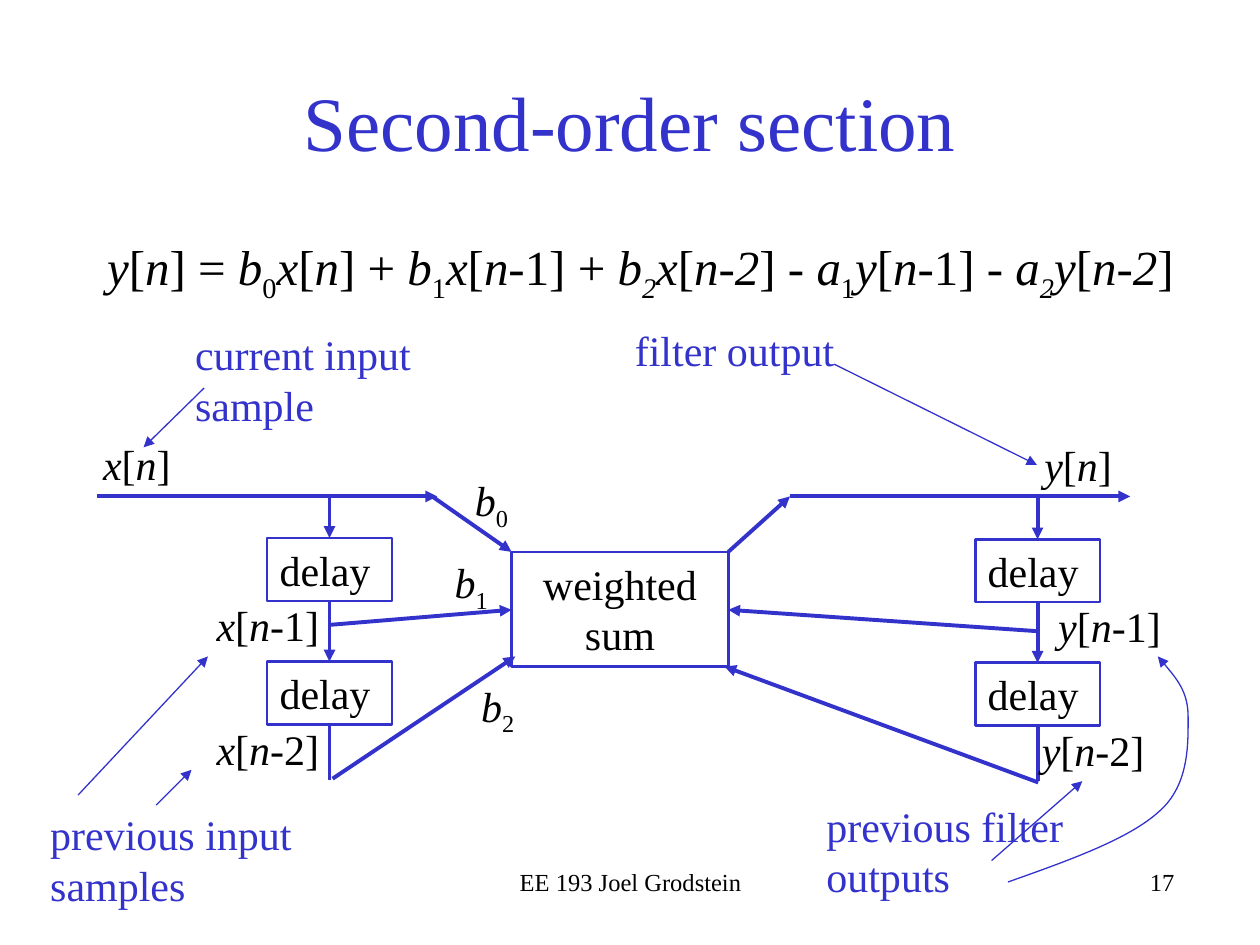
"""Builds the slide on the second-order filter section."""
from dataclasses import dataclass
from lxml.etree import SubElement
from pptx import Presentation
from pptx.dml.color import RGBColor
from pptx.enum.shapes import MSO_CONNECTOR, MSO_SHAPE
from pptx.enum.text import MSO_ANCHOR, MSO_AUTO_SIZE, PP_ALIGN as AL
from pptx.oxml.ns import qn
from pptx.util import Inches as In, Pt


@dataclass(frozen=True)
class Theme:
    font: str = "Times New Roman"
    blue: RGBColor = RGBColor(0x33, 0x33, 0xCC)
    black: RGBColor = RGBColor(0, 0, 0)
    title: int = 44
    equation: int = 28
    label: int = 24
    footer: int = 14
    flow: float = 2.25
    box: float = 1.5
    pointer: float = 0.75


T = Theme()
STYLES = {"/": (True, False), "_": (False, True), "~": (True, True)}

TITLE = "Second-order section"
EQUATION = ("/y|[|/n|] = |/b|_0|/x|[|/n|] + |/b|_1|/x|[|/n-|1] + |/b|~2|/x|[|/n-2|] - "
            "|/a|_1|/y|[|/n-|1] - |/a|~2|/y|[|/n-2|]")
FOOTERS = [("EE 193 Joel Grodstein", 3.42, AL.CENTER), ("17", 6.25, AL.RIGHT)]

SIGNALS = [
    ("/x|[|/n|]", 0.72, 3.43, 0.8), ("/y|[|/n|]", 8.19, 3.44, 0.8),
    ("/x|[|/n|-1]", 1.62, 4.71, 1.08), ("/y|[|/n|-1]", 8.3, 4.72, 1.08),
    ("/x|[|/n|-2]", 1.62, 5.69, 1.08), ("/y|[|/n|-2]", 8.17, 5.7, 1.08),
    ("/b|_0", 3.67, 3.72, 0.61), ("/b|_1", 3.51, 4.37, 0.61), ("/b|_2", 3.72, 5.35, 0.61),
]
NOTES = [
    ("current input sample", 1.45, 2.56, 2.41, 0.91),
    ("previous input samples", 0.3, 6.37, 2.41, 0.91),
    ("filter output", 4.94, 2.53, 1.88, 0.5),
    ("previous filter outputs", 6.46, 6.3, 2.28, 0.92),
]

DELAY_W, DELAY_H, DELAY_STEP = 0.99, 0.5, 0.98
DELAY_LINES = [(2.12, 4.27), (7.74, 4.28)]
SUM_BOX = (4.06, 4.38, 1.72, 0.91)
BUS_Y = 3.94
FLOWS = [
    (0.77, BUS_Y, 3.47, BUS_Y), (6.27, BUS_Y, 8.97, BUS_Y),
    (3.43, BUS_Y, 4.06, 4.38), (2.61, 4.96, 4.06, 4.84), (2.64, 6.18, 4.09, 5.21),
    (5.78, 4.38, 6.27, BUS_Y), (8.24, 5.01, 5.78, 4.84), (8.24, 6.21, 5.75, 5.29),
]
POINTERS = [
    (1.62, 3.08, 1.14, 3.55), (1.24, 6.39, 1.52, 6.11), (0.62, 6.31, 1.65, 5.21),
    (6.62, 2.89, 8.23, 3.69), (7.87, 6.83, 8.59, 6.2),
]
CURVE = [(8, 7), (8.48, 6.83), (8.96, 6.66), (9.2, 6.44), (9.44, 6.23), (9.43, 5.9),
         (9.43, 5.69), (9.43, 5.49), (9.31, 5.35), (9.19, 5.21)]


def write(sp, text, size, color=T.black, align=AL.LEFT):
    tf = sp.text_frame
    tf.word_wrap, tf.auto_size = True, MSO_AUTO_SIZE.NONE
    p = tf.paragraphs[0]
    p.alignment = align
    p.font.name, p.font.size, p.font.color.rgb = T.font, Pt(size), color
    for part in text.split("|"):
        italic, sub = STYLES.get(part[0], (False, False))
        r = p.add_run()
        r.text = part[1:] if part[0] in STYLES else part
        if italic:
            r.font.italic = True
        if sub:
            r.font._element.set("baseline", "-25000")
    return p


def place(sp, x, y, w, h):
    sp.left, sp.top, sp.width, sp.height = In(x), In(y), In(w), In(h)
    return sp


def add_label(shapes, text, x, y, w, h, size=T.label, color=T.black, align=AL.LEFT):
    write(shapes.add_textbox(In(x), In(y), In(w), In(h)), text, size, color, align)


def add_box(shapes, text, x, y, w, h, align=AL.LEFT):
    sp = shapes.add_shape(MSO_SHAPE.RECTANGLE, In(x), In(y), In(w), In(h))
    sp.shadow.inherit = False
    sp.fill.background()
    sp.line.color.rgb, sp.line.width = T.blue, Pt(T.box)
    sp.text_frame.vertical_anchor = MSO_ANCHOR.TOP
    write(sp, text, T.label, align=align)


def style_line(sp, width, arrow=True):
    sp.line.color.rgb, sp.line.width = T.blue, Pt(width)
    if arrow:
        SubElement(sp.line._get_or_add_ln(), qn("a:tailEnd"), type="triangle")


def add_line(shapes, x1, y1, x2, y2, width=T.flow, arrow=True):
    c = shapes.add_connector(MSO_CONNECTOR.STRAIGHT, In(x1), In(y1), In(x2), In(y2))
    style_line(c, width, arrow)
    SubElement(c._element.spPr, qn("a:effectLst"))


def add_curve(shapes, points):
    start, *rest = [(In(x), In(y)) for x, y in points]
    fb = shapes.build_freeform(*start)
    fb.add_line_segments(rest, close=False)
    sp = fb.convert_to_shape()
    sp.shadow.inherit = False
    sp.fill.background()
    style_line(sp, T.pointer)
    path = next(sp._element.iter(qn("a:path")))
    segs = path.findall(qn("a:lnTo"))
    for i in range(0, len(segs), 3):
        bez = SubElement(path, qn("a:cubicBezTo"))
        for seg in segs[i:i + 3]:
            bez.append(seg[0])
            path.remove(seg)


def main():
    prs = Presentation()
    prs.slide_width, prs.slide_height = In(10), In(7.5)
    s = prs.slides.add_slide(prs.slide_layouts[1])
    shapes = s.shapes

    write(place(shapes.title, 0.75, 0.33, 8.5, 1.25), TITLE, T.title, T.blue, AL.CENTER)
    body = place(s.placeholders[1], 0.75, 1.83, 8.84, 0.64)
    pPr = write(body, EQUATION, T.equation)._p.get_or_add_pPr()
    pPr.set("marL", "0")
    pPr.set("indent", "0")
    pPr.insert_element_before(pPr.makeelement(qn("a:buNone")), "a:tabLst", "a:defRPr", "a:extLst")

    for text, x, align in FOOTERS:
        add_label(shapes, text, x, 6.83, 3.17, 0.5, T.footer, align=align)

    for x, y in DELAY_LINES:
        mid = x + DELAY_W / 2
        second = y + DELAY_STEP
        for top in (y, second):
            add_box(shapes, "delay", x, top, DELAY_W, DELAY_H)
        add_line(shapes, mid, BUS_Y, mid, y)
        add_line(shapes, mid, y + DELAY_H, mid, second)
        add_line(shapes, mid, second + DELAY_H, mid, second + DELAY_H + 0.44, arrow=False)

    add_box(shapes, "weighted sum", *SUM_BOX, align=AL.CENTER)
    for ends in FLOWS:
        add_line(shapes, *ends)
    for text, x, y, w in SIGNALS:
        add_label(shapes, text, x, y, w, 0.5)
    for note in NOTES:
        add_label(shapes, *note, color=T.blue)
    for ends in POINTERS:
        add_line(shapes, *ends, width=T.pointer)
    add_curve(shapes, CURVE)
    prs.save("out.pptx")


if __name__ == "__main__":
    main()
